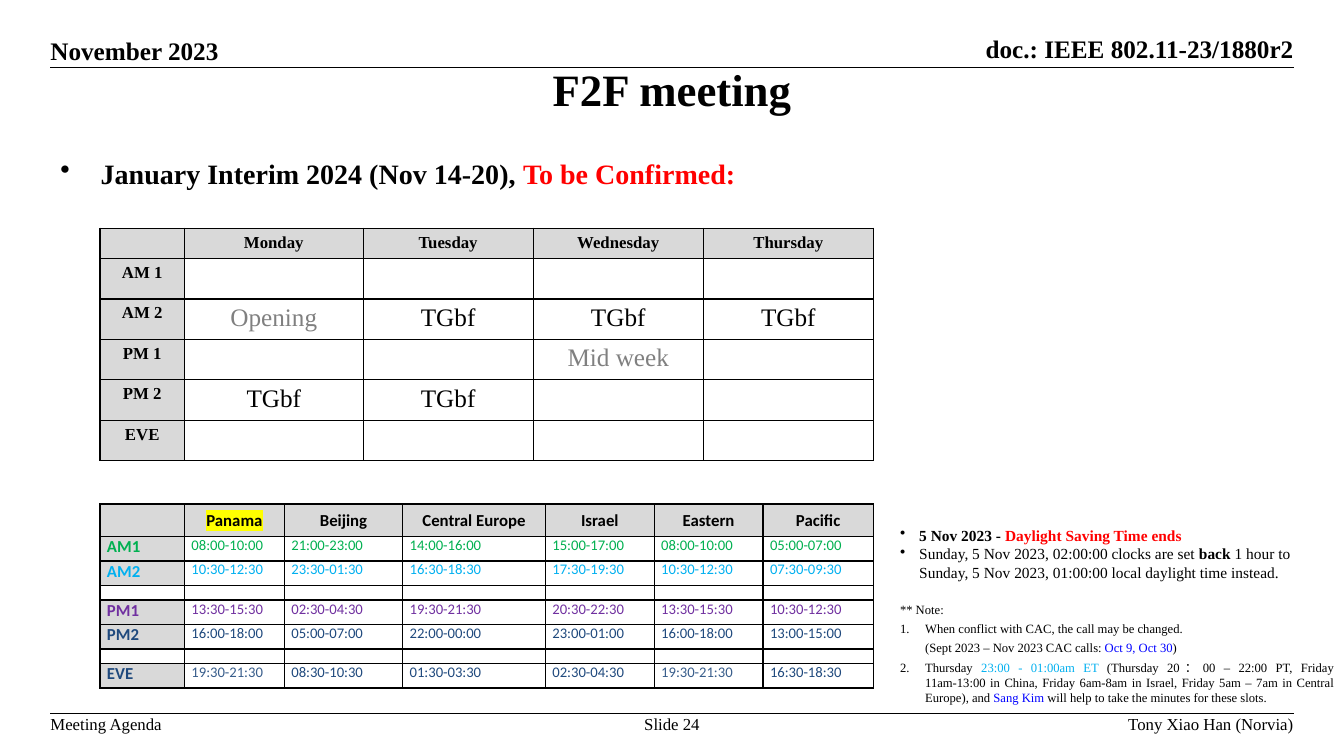
"""Build the F2F meeting slide with its agenda grid and time zone grid."""
import pptx
import pptx.util
import pptx.dml.color
import pptx.enum.shapes
import pptx.enum.text
import pptx.oxml
import pptx.oxml.ns

Pt = pptx.util.Pt
Align = pptx.enum.text.PP_ALIGN
Anchor = pptx.enum.text.MSO_ANCHOR
Rgb = pptx.dml.color.RGBColor.from_string
qn = pptx.oxml.ns.qn
space = pptx.oxml.ns.nsdecls("a")

theme = {
    "serif": "Times New Roman", "sans": "Calibri",
    "black": "000000", "white": "FFFFFF", "red": "FF0000", "blue": "0000FF",
    "gray": "808080", "shade": "D9D9D9", "mark": "FFFF00", "green": "00B050",
    "sky": "00B0F0", "plum": "7030A0", "navy": "1F497D", "steel": "385D8B",
    "title": 32, "lead": 20, "head": 18, "label": 12, "news": 11,
    "time": 10.5, "note": 9, "blank": 8,
}


def put(par, runs, size, bold=False, face="serif", fmt={}, bullet=None, left=0, hang=0):
    """Write (text, colour, bold) runs into a paragraph."""
    for key, val in fmt.items():
        setattr(par, key, val)
    props = par._p.get_or_add_pPr()
    props.set("marL", str(Pt(left)))
    props.set("indent", str(Pt(-hang)))
    if bullet:
        props.append(pptx.oxml.parse_xml(f"<a:{bullet} {space}/>".replace("/>", "/>", 1)))
    for words, tone, *heavy in runs:
        run = par.add_run()
        run.text = words
        look = {"name": theme[face], "size": Pt(theme[size]), "bold": heavy[0] if heavy else bold}
        for key, val in look.items():
            setattr(run.font, key, val)
        run.font.color.rgb = Rgb(theme[tone])


def box(x, y, w, h, pad=(0, 0), anchor=Anchor.TOP):
    """Add a wrapping text box and return its frame."""
    frame = slide.shapes.add_textbox(Pt(x), Pt(y), Pt(w), Pt(h)).text_frame
    form = {"word_wrap": True, "vertical_anchor": anchor,
            "margin_left": Pt(pad[0]), "margin_right": Pt(pad[0]),
            "margin_top": Pt(pad[1]), "margin_bottom": Pt(pad[1])}
    for key, val in form.items():
        setattr(frame, key, val)
    return frame


deck = pptx.Presentation()
deck.slide_width, deck.slide_height = Pt(960), Pt(540)
slide = deck.slides.add_slide(deck.slide_layouts[6])

for y in (48.2, 509.8):
    rule = slide.shapes.add_connector(
        pptx.enum.shapes.MSO_CONNECTOR.STRAIGHT, Pt(36), Pt(y), Pt(924), Pt(y))
    rule.line.color.rgb = Rgb(theme["black"])
    rule.line.width = Pt(1)
    rule._element.spPr.append(pptx.oxml.parse_xml(f"<a:effectLst {space}/>"))

labels = [
    ("November 2023", 36, 25.2, 200, 21.6, "head", True, Align.LEFT, Anchor.BOTTOM),
    ("doc.: IEEE 802.11-23/1880r2", 624, 23.8, 300, 21.6, "head", True, Align.RIGHT, Anchor.BOTTOM),
    ("Meeting Agenda", 36, 509.8, 120, 14.4, "label", False, Align.LEFT, Anchor.TOP),
    ("Slide 24", 430, 509.8, 100, 14.4, "label", False, Align.CENTER, Anchor.TOP),
    ("Tony Xiao Han (Norvia)", 635, 509.8, 289, 14.4, "label", False, Align.RIGHT, Anchor.TOP),
    ("F2F meeting", 0, 42, 960, 42, "title", True, Align.CENTER, Anchor.MIDDLE),
]
for words, x, y, w, h, size, bold, align, anchor in labels:
    frame = box(x, y, w, h, anchor=anchor)
    put(frame.paragraphs[0], [(words, "black")], size, bold, fmt={"alignment": align})

dot = 'buChar char="•"'
lead = box(36, 108, 516, 66, (7.2, 3.6))
put(lead.paragraphs[0],
    [("January Interim 2024 (Nov 14-20), ", "black"), ("To be Confirmed:", "red")],
    "lead", True, bullet=dot, left=28.8, hang=28.8)

week = [
    ["", "Monday", "Tuesday", "Wednesday", "Thursday"],
    ["AM 1", "", "", "", ""],
    ["AM 2", "Opening", "TGbf", "TGbf", "TGbf"],
    ["PM 1", "", "", "Mid week", ""],
    ["PM 2", "TGbf", "TGbf", "", ""],
    ["EVE", "", "", "", ""],
]
zones = [
    ["", "Panama", "Beijing", "Central Europe", "Israel", "Eastern", "Pacific"],
    ["AM1", "08:00-10:00", "21:00-23:00", "14:00-16:00", "15:00-17:00", "08:00-10:00", "05:00-07:00"],
    ["AM2", "10:30-12:30", "23:30-01:30", "16:30-18:30", "17:30-19:30", "10:30-12:30", "07:30-09:30"],
    [""] * 7,
    ["PM1", "13:30-15:30", "02:30-04:30", "19:30-21:30", "20:30-22:30", "13:30-15:30", "10:30-12:30"],
    ["PM2", "16:00-18:00", "05:00-07:00", "22:00-00:00", "23:00-01:00", "16:00-18:00", "13:00-15:00"],
    [""] * 7,
    ["EVE", "19:30-21:30", "08:30-10:30", "01:30-03:30", "02:30-04:30", "19:30-21:30", "16:30-18:30"],
]
tones = {"AM1": "green", "AM2": "sky", "PM1": "plum", "PM2": "navy", "EVE": "navy"}
grids = [
    {"data": week, "top": 163, "cols": [60.4, 127.6] + [121.5] * 3,
     "rows": [21.5] + [28.9] * 5, "face": "serif", "size": "head", "pad": (7.2, 3.6)},
    {"data": zones, "top": 360, "cols": [60.4, 71.4, 84.5, 102, 77.7, 77.7, 78.8],
     "rows": [23.3, 17.5, 17.5, 10.4, 17.5, 17.5, 10.4, 17.5],
     "face": "sans", "size": "time", "pad": (5, 0)},
]
for grid in grids:
    data, cols, rows = grid["data"], grid["cols"], grid["rows"]
    agenda = data is week
    table = slide.shapes.add_table(len(rows), len(cols), Pt(71.4), Pt(grid["top"]),
                                   Pt(sum(cols)), Pt(sum(rows))).table
    table.first_row = table.horz_banding = False
    for col, width in zip(table.columns, cols):
        col.width = Pt(width)
    for r, line in enumerate(data):
        table.rows[r].height = Pt(rows[r])
        for c, words in enumerate(line):
            cell = table.cell(r, c)
            head = r == 0 or (c == 0 and words != "")
            form = {"margin_left": Pt(grid["pad"][0]), "margin_right": Pt(grid["pad"][0]),
                    "margin_top": Pt(grid["pad"][1]), "margin_bottom": Pt(grid["pad"][1]),
                    "vertical_anchor": Anchor.TOP if agenda or r else Anchor.MIDDLE}
            for key, val in form.items():
                setattr(cell, key, val)
            edge = cell._tc.get_or_add_tcPr()
            for side in ("lnL", "lnR", "lnT", "lnB"):
                edge.append(pptx.oxml.parse_xml(
                    f'<a:{side} {space} w="{Pt(1)}"><a:solidFill>'
                    f'<a:srgbClr val="{theme["black"]}"/></a:solidFill></a:{side}>'))
            if head:
                cell.fill.solid()
                cell.fill.fore_color.rgb = Rgb(theme["shade"])
            else:
                cell.fill.background()
            par = cell.text_frame.paragraphs[0]
            if not words:
                par._p.append(pptx.oxml.parse_xml(
                    f'<a:endParaRPr {space} sz="{theme["blank"] * 100}"/>'))
                continue
            if agenda:
                tone = "gray" if words in ("Opening", "Mid week") else "black"
            elif words == "19:30-21:30" and line[0] == "EVE":
                tone = "steel"
            else:
                tone = tones.get(line[0], "black")
            align = Align.CENTER if agenda or r == 0 else Align.LEFT
            put(par, [(words, tone)], "label" if head else grid["size"], head,
                grid["face"], {"alignment": align})
            if words == "Panama":
                fill = par.runs[0]._r.rPr.find(qn("a:solidFill"))
                fill.addnext(pptx.oxml.parse_xml(
                    f'<a:highlight {space}><a:srgbClr val="{theme["mark"]}"/></a:highlight>'))

news = slide.shapes.add_shape(pptx.enum.shapes.MSO_SHAPE.RECTANGLE,
                              Pt(635.8), Pt(372.2), Pt(298.8), Pt(47.5))
news.shadow.inherit = False
news.fill.solid()
news.fill.fore_color.rgb = Rgb(theme["white"])
news.line.fill.background()
news.text_frame.word_wrap = True
news.text_frame.vertical_anchor = Anchor.TOP
facts = [
    [("5 Nov 2023 - ", "black", True), ("Daylight Saving Time ends", "red", True)],
    [("Sunday, 5 Nov 2023, 02:00:00 clocks are set ", "black"), ("back", "black", True),
     (" 1 hour to Sunday, 5 Nov 2023, 01:00:00 local daylight time instead.", "black")],
]
for i, runs in enumerate(facts):
    par = news.text_frame.add_paragraph() if i else news.text_frame.paragraphs[0]
    put(par, runs, "news", fmt={"alignment": Align.LEFT}, bullet=dot, left=13.7, hang=13.7)

notes = [
    ([("** Note:", "black")], None, 0, 0),
    ([("When conflict with CAC, the call may be changed.", "black")],
     'buAutoNum type="arabicPeriod"', 18, 18),
    ([("(Sept 2023 – Nov 2023 CAC calls: ", "black"), ("Oct 9, Oct 30", "blue"), (")", "black")],
     None, 18, 0),
    ([("Thursday ", "black"), ("23:00 - 01:00am ET ", "sky"),
      ("(Thursday 20：00 – 22:00 PT, Friday 11am-13:00 in China, Friday 6am-8am in Israel, "
       "Friday 5am – 7am in Central Europe), and ", "black"), ("Sang Kim ", "blue"),
      ("will help to take the minutes for these slots.", "black")],
     'buAutoNum type="arabicPeriod" startAt="2"', 18, 18),
]
frame = box(635.8, 426.2, 324, 82, (7.2, 3.6))
for i, (runs, bullet, left, hang) in enumerate(notes):
    par = frame.add_paragraph() if i else frame.paragraphs[0]
    put(par, runs, "note", fmt={"alignment": Align.JUSTIFY, "space_after": Pt(3)},
        bullet=bullet, left=left, hang=hang)

deck.save("out.pptx")
